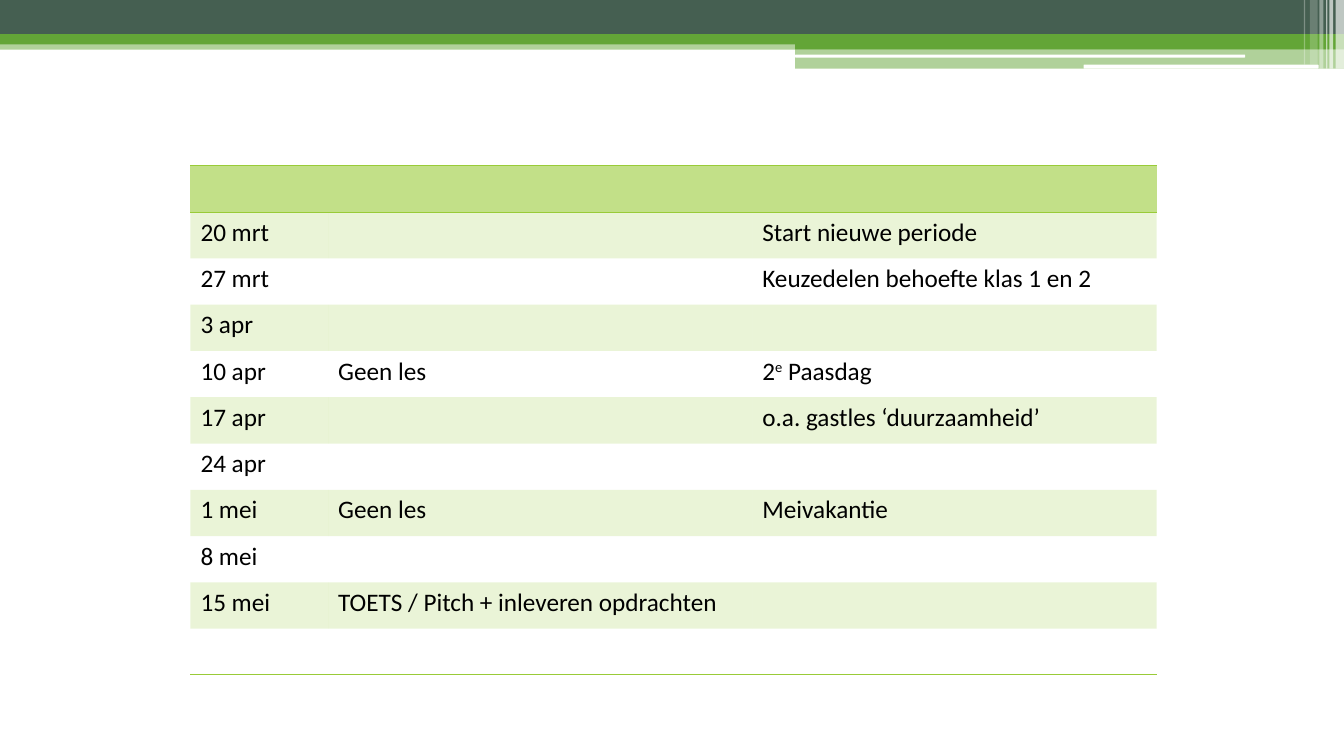
from lxml.etree import SubElement
from pptx import Presentation
from pptx.dml.color import RGBColor
from pptx.enum.shapes import MSO_SHAPE as Shape
from pptx.oxml.ns import qn
from pptx.util import Cm, Pt

SLATE, GREEN, LIME, PALE_LIME, WHITE = "455F51", "63A537", "99CB38", "C2E088", "FFFFFF"
NO_TABLE_STYLE = "{2D5ABB26-0587-4C30-8999-92F81FD0307C}"

SCHEDULE = [
    ("", "", ""),
    ("20 mrt", "", "Start nieuwe periode"),
    ("27 mrt", "", "Keuzedelen behoefte klas 1 en 2"),
    ("3 apr", "", ""),
    ("10 apr", "Geen les", ("2", "e", " Paasdag")),
    ("17 apr", "", "o.a. gastles ‘duurzaamheid’"),
    ("24 apr", "", ""),
    ("1 mei", "Geen les", "Meivakantie"),
    ("8 mei", "", ""),
    ("15 mei", "TOETS / Pitch + inleveren opdrachten", ""),
    ("", "", ""),
]


def paint(fill, properties, color, opacity=100):
    fill.solid()
    fill.fore_color.rgb = RGBColor.from_string(color)
    if opacity < 100:
        value = properties.find(qn("a:solidFill"))[0]
        SubElement(value, qn("a:alpha"), val=str(opacity * 1000))


def write(paragraph, text, size=18, font="Calibri", color="000000", raised=False):
    run = paragraph.add_run()
    run.text = text
    run.font.size = Pt(size)
    run.font.name = font
    run.font.color.rgb = RGBColor.from_string(color)
    if raised:
        run.font._element.set("baseline", "30000")


def add_block(slide, left, top, width, height, color, opacity=100, kind=Shape.RECTANGLE):
    shape = slide.shapes.add_shape(kind, Cm(left), Cm(top), Cm(width), Cm(height))
    shape.shadow.inherit = False
    shape.line.fill.background()
    paint(shape.fill, shape._element.spPr, color, opacity)


def add_banner(slide, left, top, width):
    right = left + width
    step = left + 20.04
    add_block(slide, left, top + 1.02, width, 0.23, GREEN, 50)
    add_block(slide, left, top, width, 0.86, SLATE)
    add_block(slide, left, top + 0.86, width, 0.26, GREEN)
    add_block(slide, step, top + 0.99, right - step, 0.25, GREEN)
    add_block(slide, step, top + 1.23, right - step, 0.5, GREEN, 50)
    add_block(slide, step, top + 1.38, 11.34, 0.07, WHITE, kind=Shape.ROUNDED_RECTANGLE)
    add_block(slide, left + 27.31, top + 1.63, 5.92, 0.1, WHITE, kind=Shape.ROUNDED_RECTANGLE)
    stripes = [(0.21, 0.21, 1.73, 65), (0.37, 0.1, 1.73, 65), (0.45, 0.03, 1.73, 60),
               (0.62, 0.1, 1.73, 40), (0.86, 0.2, 1.63, 20), (1.01, 0.03, 1.63, 30)]
    for inset, stripe_width, height, opacity in stripes:
        add_block(slide, right - inset, top, stripe_width, height, WHITE, opacity)


def add_border(cell, side):
    line = SubElement(cell._tc.get_or_add_tcPr(), qn(f"a:{side}"), w=str(Pt(1)))
    fill = SubElement(line, qn("a:solidFill"))
    SubElement(fill, qn("a:srgbClr"), val=LIME)


def format_cell(cell, row):
    sides = {0: ("lnT", "lnB"), len(SCHEDULE) - 1: ("lnB",)}
    for side in sides.get(row, ()):
        add_border(cell, side)
    if row == 0:
        paint(cell.fill, cell._tc.tcPr, PALE_LIME)
    elif row % 2:
        paint(cell.fill, cell._tc.get_or_add_tcPr(), LIME, 20)
    else:
        cell.fill.background()


def add_schedule(slide, left, top, width, height):
    columns = [0.1425, 0.439, 0.4185]
    frame = slide.shapes.add_table(len(SCHEDULE), len(columns),
                                   Cm(left), Cm(top), Cm(width), Cm(height))
    table = frame.table
    table._tbl.tblPr.find(qn("a:tableStyleId")).text = NO_TABLE_STYLE
    table.first_row = table.horz_banding = False
    for column, share in zip(table.columns, columns):
        column.width = Cm(width * share)
    for row, texts in enumerate(SCHEDULE):
        for column, text in enumerate(texts):
            cell = table.cell(row, column)
            format_cell(cell, row)
            parts = (text,) if isinstance(text, str) else text
            for index, part in enumerate(parts):
                if part:
                    write(cell.text_frame.paragraphs[0], part, raised=index == 1)


def main():
    presentation = Presentation()
    presentation.slide_width, presentation.slide_height = Cm(33.87), Cm(19.05)
    slide = presentation.slides.add_slide(presentation.slide_layouts[6])
    add_banner(slide, 0, 0, 33.87)
    add_schedule(slide, 4.8, 4.18, 24.35, 12.83)
    presentation.save("out.pptx")


if __name__ == "__main__":
    main()
